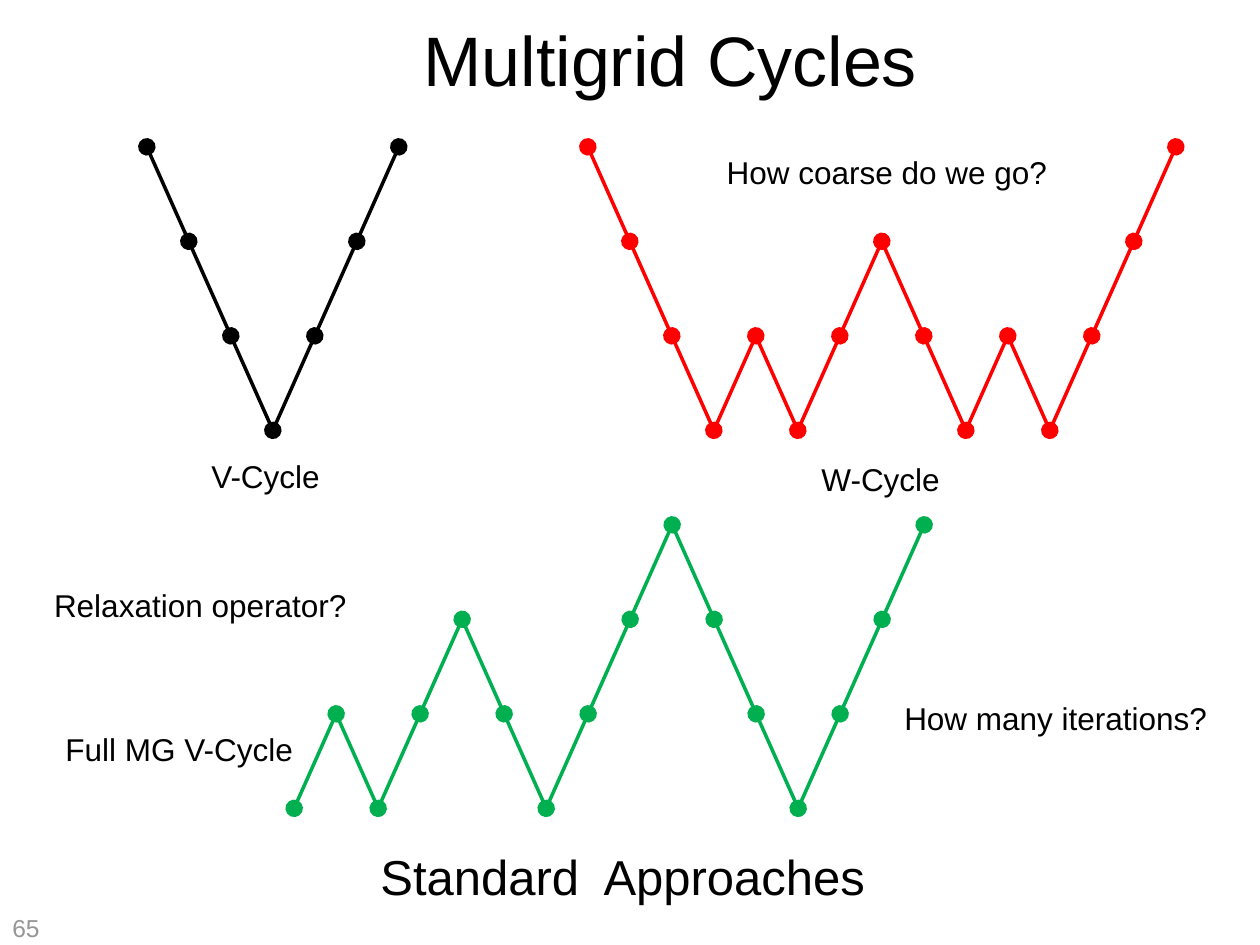
from dataclasses import dataclass
from itertools import pairwise

from lxml.etree import SubElement as Sub
from pptx import Presentation
from pptx.dml.color import RGBColor as Color
from pptx.enum.shapes import MSO_CONNECTOR as Connector
from pptx.enum.text import MSO_ANCHOR as Anchor
from pptx.enum.text import MSO_AUTO_SIZE as AutoSize
from pptx.enum.text import PP_ALIGN as Align
from pptx.oxml.ns import qn
from pptx.util import Cm, Pt


@dataclass(frozen=True)
class Theme:
    font: str = "Arial"
    ink: Color = Color(0, 0, 0)
    muted: Color = Color(0x96, 0x96, 0x96)
    red: Color = Color(0xFF, 0, 0)
    green: Color = Color(0, 0xB0, 0x50)
    title: Pt = Pt(40)
    heading: Pt = Pt(28)
    label: Pt = Pt(18)
    number: Pt = Pt(14)
    stroke: Pt = Pt(2)


class Sketch:
    step = 2.54 / 3
    drop = 1.905

    def __init__(self, page, theme):
        self.page = page
        self.theme = theme

    def text(self, words, left, top, width, height, size, color=None, **layout):
        box = self.page.shapes.add_textbox(Cm(left), Cm(top), Cm(width), Cm(height))
        frame = box.text_frame
        settings = {"word_wrap": False, "auto_size": AutoSize.NONE} | layout
        alignment = settings.pop("alignment", Align.LEFT)
        for name, value in settings.items():
            setattr(frame, name, value)
        para = frame.paragraphs[0]
        para.alignment = alignment
        span = para.add_run()
        span.text = words
        for name, value in {"name": self.theme.font, "size": size}.items():
            setattr(span.font, name, value)
        span.font.color.rgb = color or self.theme.ink

    def label(self, words, left, top, width, height=1.02, size=None):
        self.text(words, left, top, width, height, size or self.theme.label,
                  auto_size=AutoSize.SHAPE_TO_FIT_TEXT)

    def line(self, start, end, color, ends):
        line = self.page.shapes.add_connector(
            Connector.STRAIGHT, *(Cm(value) for value in (*start, *end)))
        line.line.width = self.theme.stroke
        line.line.color.rgb = color
        outline = line.line._get_or_add_ln()
        for end_tag in ends:
            Sub(outline, qn(end_tag), type="oval", w="lg", len="lg")
        Sub(line._element.spPr, qn("a:effectLst"))

    def cycle(self, levels, left, top, color):
        points = [(left + index * self.step, top + int(level) * self.drop)
                  for index, level in enumerate(levels)]
        for index, (start, end) in enumerate(pairwise(points)):
            ends = ["a:tailEnd"] if index else ["a:headEnd", "a:tailEnd"]
            self.line(start, end, color, ends)


def main():
    deck = Presentation()
    deck.slide_width, deck.slide_height = Cm(25.4), Cm(19.05)
    theme = Theme()
    sketch = Sketch(deck.slides.add_slide(deck.slide_layouts[6]), theme)

    sketch.text("Multigrid Cycles", 3.3, 0, 20.42, 2.36, theme.title,
                word_wrap=True, vertical_anchor=Anchor.MIDDLE, alignment=Align.CENTER)
    sketch.text("65", 0, 18.29, 1.19, 0.76, theme.number, theme.muted)

    sketch.cycle("0123210", 2.96, 2.96, theme.ink)
    sketch.cycle("012323212323210", 11.85, 2.96, theme.red)
    sketch.cycle("3232123210123210", 5.93, 10.58, theme.green)

    sketch.label("Standard  Approaches", 7.42, 16.94, 10.39, 1.45, theme.heading)
    for words, left, top, width in (
        ("Relaxation operator?", 0.84, 11.68, 6.45),
        ("How many iterations?", 17.98, 13.97, 6.68),
        ("How coarse do we go?", 14.4, 2.97, 7.04),
        ("V-Cycle", 4.01, 9.09, 2.72),
        ("W-Cycle", 16.31, 9.14, 2.92),
        ("Full MG V-Cycle", 1.07, 14.6, 5.16),
    ):
        sketch.label(words, left, top, width)

    deck.save("out.pptx")


if __name__ == "__main__":
    main()
